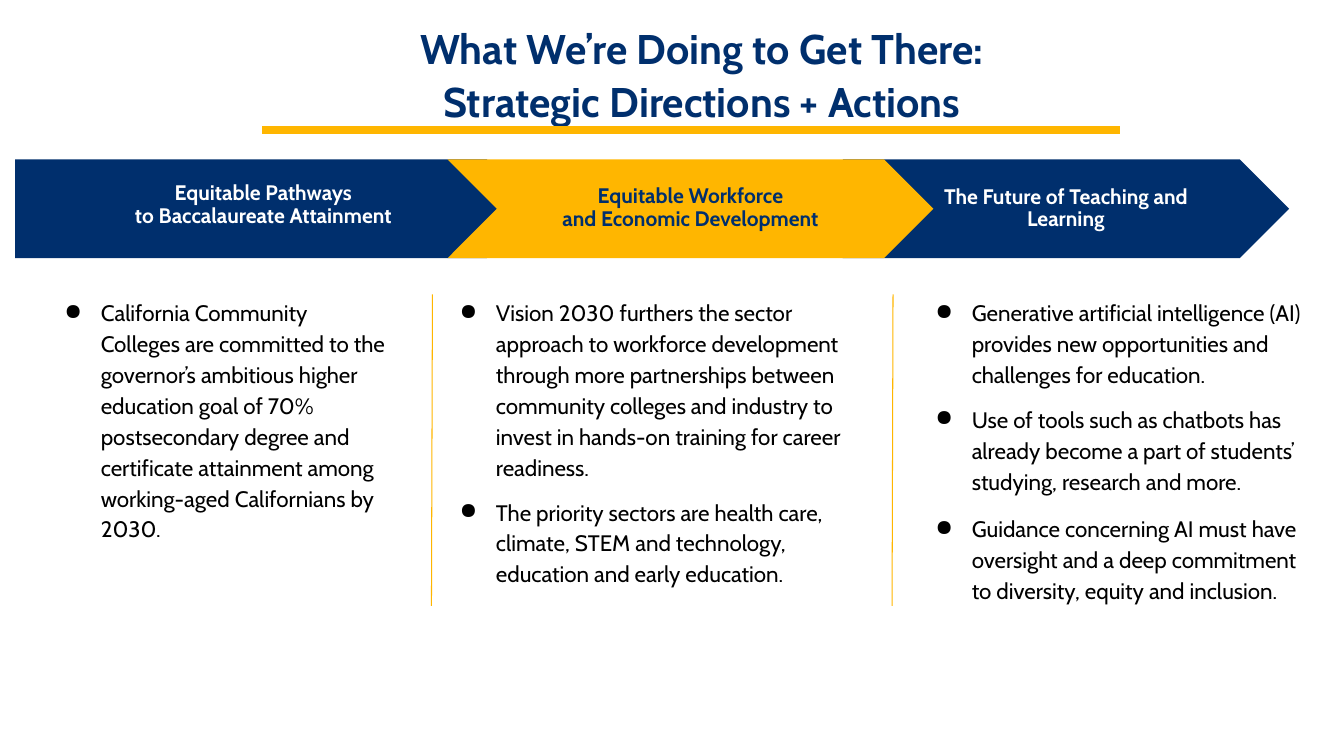
"""Builds the strategic directions and actions slide."""
from lxml import etree
from pptx import Presentation
from pptx.dml.color import RGBColor
from pptx.enum.shapes import MSO_CONNECTOR, MSO_SHAPE
from pptx.enum.text import MSO_ANCHOR, PP_ALIGN
from pptx.oxml.ns import qn
from pptx.util import Pt

CENTER, LEFT = PP_ALIGN.CENTER, PP_ALIGN.LEFT
TOP, MIDDLE = MSO_ANCHOR.TOP, MSO_ANCHOR.MIDDLE
CHEVRON, PENTAGON = MSO_SHAPE.CHEVRON, MSO_SHAPE.PENTAGON
STRAIGHT = MSO_CONNECTOR.STRAIGHT

COLORS = {"navy": "002F6D", "gold": "FFB600", "white": "FFFFFF", "black": "000000"}
TITLE = {"size": 29.6, "bold": True, "color": "navy", "align": CENTER, "spacing": 0.8,
         "anchor": TOP, "insets": (36, 36, 36, 3.6), "bullet": False}
HEADING = {"size": 15, "bold": True, "color": "white", "align": CENTER, "spacing": 0.9,
           "anchor": MIDDLE, "insets": (9.4, 9.4, 9.4, 9.4), "bullet": False}
BODY = {"size": 16, "bold": False, "color": "black", "align": LEFT, "spacing": 1.15,
        "anchor": TOP, "insets": (9.4, 9.4, 9.4, 9.4), "bullet": True}


def rgb(name):
    return RGBColor.from_string(COLORS[name])


def write(sp, lines, style, gaps):
    tf = sp.text_frame
    tf.word_wrap = True
    tf.vertical_anchor = style["anchor"]
    for side, inset in zip(("left", "top", "right", "bottom"), style["insets"]):
        setattr(tf, f"margin_{side}", Pt(inset))
    for i, (line, gap) in enumerate(zip(lines, gaps)):
        p = tf.add_paragraph() if i else tf.paragraphs[0]
        p.alignment = style["align"]
        p.line_spacing = style["spacing"]
        p.space_before = Pt(gap)
        if style["bullet"]:
            pPr = p._p.get_or_add_pPr()
            pPr.set("marL", str(Pt(36)))
            pPr.set("indent", str(Pt(-26)))
            color = etree.SubElement(pPr, qn("a:buClr"))
            etree.SubElement(color, qn("a:srgbClr"), val=COLORS["black"])
            etree.SubElement(pPr, qn("a:buChar"), char="●")
        r = p.add_run()
        r.text = line
        for key, value in {"name": "Cabin", "size": Pt(style["size"]), "bold": style["bold"]}.items():
            setattr(r.font, key, value)
        r.font.color.rgb = rgb(style["color"])


prs = Presentation()
prs.slide_width, prs.slide_height = Pt(960), Pt(540)
s = prs.slides.add_slide(prs.slide_layouts[6])

title = s.shapes.add_textbox(Pt(-10.8), Pt(-13), Pt(1024.6), Pt(108.7))
write(title, ["What We’re Doing to Get There:", "Strategic Directions + Actions"], TITLE, (0, 10))

directions = [
    {"shape": CHEVRON, "arrow": (601.9, 319), "fill": "navy", "text": "white", "lift": 0,
     "heading": ["The Future of Teaching and Learning"],
     "column": (648.7, 293.8), "gaps": (0, 10, 12),
     "actions": [
         "Generative artificial intelligence (AI) provides new opportunities and challenges for education.",
         "Use of tools such as chatbots has already become a part of students’ studying, research and more.",
         "Guidance concerning AI must have oversight and a deep commitment to diversity, equity and inclusion."]},
    {"shape": PENTAGON, "arrow": (10.8, 372.2), "fill": "navy", "text": "white", "lift": 5,
     "heading": ["Equitable Pathways", "to Baccalaureate Attainment"],
     "column": (26.6, 258.5), "gaps": (0,),
     "actions": [
         "California Community Colleges are committed to the governor’s ambitious higher education goal of "
         "70% postsecondary degree and certificate attainment among working-aged Californians by 2030."]},
    {"shape": CHEVRON, "arrow": (319.7, 347), "fill": "gold", "text": "navy", "lift": 1,
     "heading": ["Equitable Workforce", "and Economic Development"],
     "column": (308.9, 328.3), "gaps": (0, 10),
     "actions": [
         "Vision 2030 furthers the sector approach to workforce development through more partnerships between "
         "community colleges and industry to invest in hands-on training for career readiness.",
         "The priority sectors are health care, climate, STEM and technology, education and early education."]},
]
for d in directions:
    left, width = d["arrow"]
    arrow = s.shapes.add_shape(d["shape"], Pt(left), Pt(113.8), Pt(width), Pt(70.6))
    arrow.adjustments[0] = 0.5
    arrow.shadow.inherit = False
    arrow.fill.solid()
    arrow.fill.fore_color.rgb = rgb(d["fill"])
    arrow.line.fill.background()
    insets = (9.4, 9.4, 9.4, 9.4 + d["lift"])
    write(arrow, d["heading"], {**HEADING, "color": d["text"], "insets": insets}, (0, 0))

    left, width = d["column"]
    column = s.shapes.add_textbox(Pt(left), Pt(201.6), Pt(width), Pt(280))
    write(column, d["actions"], BODY, d["gaps"])

rules = [(187.2, 92.9, 799.9, 92.9, 5.75),
         (637.9, 210.2, 637.2, 432.7, 0.75),
         (308.9, 210.2, 308.2, 432.7, 0.75)]
for x1, y1, x2, y2, weight in rules:
    rule = s.shapes.add_connector(STRAIGHT, Pt(x1), Pt(y1), Pt(x2), Pt(y2))
    rule.line.color.rgb = rgb("gold")
    rule.line.width = Pt(weight)
    etree.SubElement(rule._element.spPr, qn("a:effectLst"))

prs.save("out.pptx")
